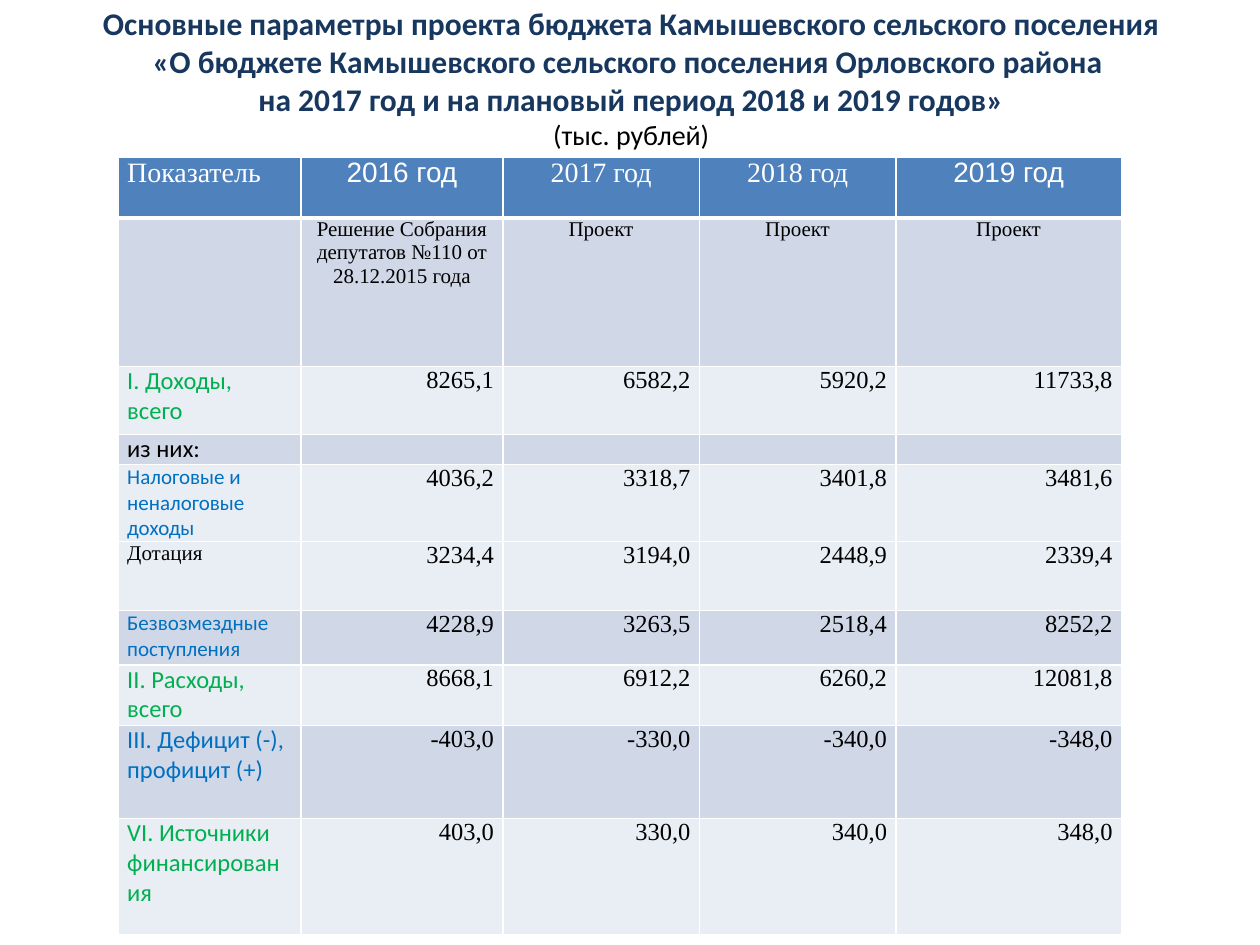
from lxml.etree import SubElement
from pptx import Presentation
from pptx.dml.color import RGBColor
from pptx.enum.text import MSO_ANCHOR, MSO_AUTO_SIZE, PP_ALIGN
from pptx.oxml.ns import qn
from pptx.util import Inches, Pt

SANS, SERIF, ARIAL = "Calibri", "Times New Roman", "Arial"
WHITE, BLACK, NAVY = "FFFFFF", "000000", "17375E"
BLUE, GREEN = "0070C0", "00B050"
HEADER, DARK_BAND, LIGHT_BAND = "4F81BD", "D0D8E8", "E9EDF4"

TITLE_LINES = [
    "Основные параметры проекта бюджета Камышевского сельского поселения",
    "«О бюджете Камышевского сельского поселения Орловского района ",
    "на 2017 год и на плановый период 2018 и 2019 годов»",
]
UNITS = "(тыс. рублей)"

YEARS = [("2016 год", ARIAL), ("2017 год", SERIF), ("2018 год", SERIF), ("2019 год", ARIAL)]
STAGES = ["Решение Собрания депутатов №110 от 28.12.2015 года", "Проект", "Проект", "Проект"]

# label, label size, label font, label colour, band, values
INDICATORS = [
    ("I. Доходы, всего", 14, SANS, GREEN, LIGHT_BAND, ["8265,1", "6582,2", "5920,2", "11733,8"]),
    ("из них:", 14, SANS, BLACK, DARK_BAND, [""] * 4),
    ("Налоговые и неналоговые доходы", 12, SANS, BLUE, LIGHT_BAND,
     ["4036,2", "3318,7", "3401,8", "3481,6"]),
    ("Дотация", 12, SERIF, BLACK, LIGHT_BAND, ["3234,4", "3194,0", "2448,9", "2339,4"]),
    ("Безвозмездные поступления", 12, SANS, BLUE, DARK_BAND,
     ["4228,9", "3263,5", "2518,4", "8252,2"]),
    ("II. Расходы, всего", 14, SANS, GREEN, LIGHT_BAND, ["8668,1", "6912,2", "6260,2", "12081,8"]),
    ("III. Дефицит (-), профицит (+)", 14, SANS, BLUE, DARK_BAND,
     ["-403,0", "-330,0", "-340,0", "-348,0"]),
    ("VI. Источники финансирования", 14, SANS, GREEN, LIGHT_BAND,
     ["403,0", "330,0", "340,0", "348,0"]),
]
COLUMN_WIDTHS = [1.45, 1.6, 1.56, 1.56, 1.79]
ROW_HEIGHTS = [0.48, 1.18, 0.54, 0.23, 0.6, 0.55, 0.43, 0.48, 0.74, 0.92]


def color(value):
    return RGBColor.from_string(value)


def add_text(paragraph, text, size=14, font=SERIF, fill=BLACK, bold=False, align=PP_ALIGN.LEFT):
    paragraph.alignment = align
    if not text:
        # An empty cell keeps its row low only if its end mark has a size
        SubElement(paragraph._p, qn("a:endParaRPr"), sz=str(size * 100))
        return
    run = paragraph.add_run()
    run.text = text
    run.font.size = Pt(size)
    run.font.name = font
    run.font.bold = bold
    run.font.color.rgb = color(fill)


def set_borders(cell, **widths):
    """Draw white cell borders; widths in points by side (L, R, T, B), 1 by default."""
    properties = cell._tc.get_or_add_tcPr()
    for position, side in enumerate("LRTB"):
        line = properties.makeelement(qn(f"a:ln{side}"), {"w": str(Pt(widths.get(side, 1)))})
        solid = SubElement(line, qn("a:solidFill"))
        SubElement(solid, qn("a:srgbClr"), val=WHITE)
        properties.insert(position, line)


def fill_cell(cell, text, band, borders, **text_format):
    cell.margin_left = cell.margin_right = Inches(0.07)
    cell.margin_top = cell.margin_bottom = 0
    cell.vertical_anchor = MSO_ANCHOR.TOP
    cell.fill.solid()
    cell.fill.fore_color.rgb = color(band)
    set_borders(cell, **borders)
    add_text(cell.text_frame.paragraphs[0], text, **text_format)


def add_title(slide):
    title = slide.shapes.title
    title.left, title.top, title.width, title.height = map(Inches, (0.51, 0, 9, 1.23))
    frame = title.text_frame
    frame.word_wrap = True
    frame.auto_size = MSO_AUTO_SIZE.NONE
    frame.vertical_anchor = MSO_ANCHOR.MIDDLE
    paragraph = frame.paragraphs[0]
    for line in TITLE_LINES:
        add_text(paragraph, line, size=18, font=SANS, fill=NAVY, bold=True, align=PP_ALIGN.CENTER)
        paragraph.add_line_break()
    add_text(paragraph, UNITS, size=16, font=SANS, align=PP_ALIGN.CENTER)


def add_budget_table(slide):
    table = slide.shapes.add_table(
        len(ROW_HEIGHTS), len(COLUMN_WIDTHS), Inches(0.94), Inches(1.25),
        Inches(sum(COLUMN_WIDTHS)), Inches(sum(ROW_HEIGHTS))).table
    for column, width in zip(table.columns, COLUMN_WIDTHS):
        column.width = Inches(width)
    for row, height in zip(table.rows, ROW_HEIGHTS):
        row.height = Inches(height)

    header_style = dict(band=HEADER, borders={"B": 3}, size=16, fill=WHITE)
    fill_cell(table.cell(0, 0), "Показатель", **header_style)
    stage_style = dict(band=DARK_BAND, borders={"T": 3}, size=12)
    fill_cell(table.cell(1, 0), "", **stage_style)
    for column, ((year, font), stage) in enumerate(zip(YEARS, STAGES), start=1):
        fill_cell(table.cell(0, column), year, font=font, align=PP_ALIGN.CENTER, **header_style)
        fill_cell(table.cell(1, column), stage, align=PP_ALIGN.CENTER, **stage_style)

    for row, (label, size, font, fill, band, values) in enumerate(INDICATORS, start=2):
        fill_cell(table.cell(row, 0), label, band, {}, size=size, font=font, fill=fill)
        for column, value in enumerate(values, start=1):
            fill_cell(table.cell(row, column), value, band, {}, align=PP_ALIGN.RIGHT)


def main():
    presentation = Presentation()
    presentation.slide_width, presentation.slide_height = Inches(10), Inches(7.5)
    slide = presentation.slides.add_slide(presentation.slide_layouts[5])
    add_title(slide)
    add_budget_table(slide)
    presentation.save("out.pptx")


if __name__ == "__main__":
    main()
